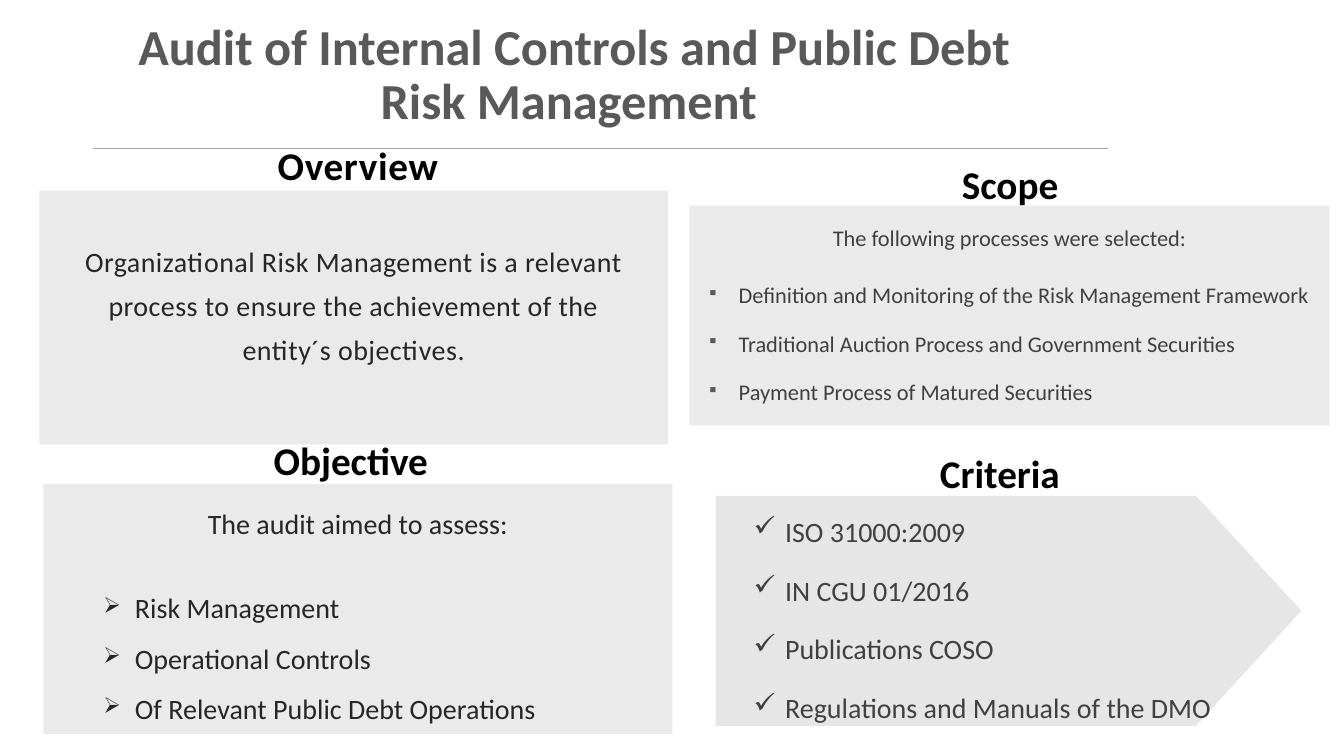
from dataclasses import dataclass

from lxml import etree
from pptx import Presentation
from pptx.dml.color import RGBColor
from pptx.enum.shapes import MSO_CONNECTOR, MSO_SHAPE
from pptx.enum.text import MSO_ANCHOR, PP_ALIGN
from pptx.oxml.ns import qn
from pptx.util import Pt

RECTANGLE = MSO_SHAPE.RECTANGLE
PENTAGON = MSO_SHAPE.PENTAGON
TOP, MIDDLE = MSO_ANCHOR.TOP, MSO_ANCHOR.MIDDLE
LEFT, CENTER = PP_ALIGN.LEFT, PP_ALIGN.CENTER
FONT = "Calibri"
HANGING = 22.5


@dataclass
class Box:
    left: float
    top: float
    width: float
    height: float


@dataclass
class Bullet:
    symbol: str
    indent: float
    percent: int = 100
    color: str = ""


@dataclass
class Line:
    text: str
    size: float
    color: str
    bold: bool = False
    line_spacing: float = 1.0
    space_before: float = 0
    tracking: int = 0
    bullet: Bullet | None = None


@dataclass
class Panel:
    box: Box
    fill: str
    lines: list[Line]
    kind: int = PENTAGON
    point: float = 0
    anchor: int = TOP
    top_inset: float = 3.6


@dataclass
class Label:
    box: Box
    line: Line
    anchor: int = TOP


def rgb(color: str) -> RGBColor:
    return RGBColor.from_string(color)


def add_bullet(paragraph, bullet: Bullet) -> None:
    properties = paragraph._p.get_or_add_pPr()
    properties.set("marL", str(Pt(bullet.indent)))
    properties.set("indent", str(-Pt(HANGING)))
    if bullet.color:
        holder = etree.SubElement(properties, qn("a:buClr"))
        etree.SubElement(holder, qn("a:srgbClr")).set("val", bullet.color)
    etree.SubElement(properties, qn("a:buSzPct")).set("val", str(bullet.percent * 1000))
    etree.SubElement(properties, qn("a:buChar")).set("char", bullet.symbol)


def write_lines(text_frame, lines: list[Line], anchor: int) -> None:
    text_frame.word_wrap = True
    text_frame.vertical_anchor = anchor
    for index, line in enumerate(lines):
        paragraph = text_frame.paragraphs[0] if index == 0 else text_frame.add_paragraph()
        if line.bullet:
            add_bullet(paragraph, line.bullet)
        paragraph.alignment = LEFT if line.bullet else CENTER
        paragraph.line_spacing = line.line_spacing
        paragraph.space_before = Pt(line.space_before if index else 0)
        paragraph.font.name = FONT
        paragraph.font.size = Pt(line.size)
        paragraph.font.bold = line.bold
        paragraph.font.color.rgb = rgb(line.color)
        run = paragraph.add_run()
        run.text = line.text
        if line.tracking:
            run._r.get_or_add_rPr().set("spc", str(line.tracking))


def place(box: Box) -> tuple[Pt, Pt, Pt, Pt]:
    return Pt(box.left), Pt(box.top), Pt(box.width), Pt(box.height)


def draw_panel(slide, panel: Panel) -> None:
    shape = slide.shapes.add_shape(panel.kind, *place(panel.box))
    if panel.kind == PENTAGON:
        shape.adjustments[0] = panel.point
    shape.shadow.inherit = False
    shape.fill.solid()
    shape.fill.fore_color.rgb = rgb(panel.fill)
    shape.line.fill.background()
    if panel.lines:
        shape.text_frame.margin_top = Pt(panel.top_inset)
        write_lines(shape.text_frame, panel.lines, panel.anchor)


def draw_label(slide, label: Label) -> None:
    text_box = slide.shapes.add_textbox(*place(label.box))
    write_lines(text_box.text_frame, [label.line], label.anchor)


def draw_rule(slide, left: float, right: float, top: float) -> None:
    rule = slide.shapes.add_connector(
        MSO_CONNECTOR.STRAIGHT, Pt(left), Pt(top), Pt(right), Pt(top))
    rule.line.color.rgb = rgb("A6A6A6")
    rule.line.width = Pt(0.75)
    etree.SubElement(rule._element.spPr, qn("a:effectLst"))


def heading(text: str, tracking: int = 0) -> Line:
    return Line(text, 28, "000000", bold=True, tracking=tracking)


def bulleted(texts: list[str], size: float, color: str, bullet: Bullet,
             gaps: list[float]) -> list[Line]:
    return [Line(text, size, color, line_spacing=1.5, space_before=gap, bullet=bullet)
            for text, gap in zip(texts, gaps)]


SCOPE = [Line("The following processes were selected:", 16, "404040", line_spacing=1.5)] + bulleted(
    ["Definition and Monitoring of the Risk Management Framework",
     "Traditional Auction Process and Government Securities",
     "Payment Process of Matured Securities"],
    16, "404040", Bullet("▪", 28.1, 70, "595959"), [12, 6, 6])
CRITERIA = bulleted(
    ["ISO 31000:2009", "IN CGU 01/2016", "Publications COSO",
     "Regulations and Manuals of the DMO"],
    20, "404040", Bullet("✓", 42.5), [0, 6, 6, 6])
OBJECTIVE = [Line("The audit aimed to assess:", 20, "262626")] + bulleted(
    ["Risk Management", "Operational Controls", "Of Relevant Public Debt Operations"],
    20, "262626", Bullet("➢", 58.3, 80), [24, 0, 0])

PANELS = [
    Panel(Box(492.5, 146.9, 457.2, 157), "EAEAEA", SCOPE),
    Panel(Box(511.2, 354.2, 418.3, 164.2), "E6E6E6", CRITERIA, point=0.458, anchor=MIDDLE),
    Panel(Box(28.1, 136.1, 449.3, 181.4), "EAEAEA", [], kind=RECTANGLE),
    Panel(Box(31, 345.6, 449.3, 178.6), "EAEAEA", OBJECTIVE, top_inset=16.5),
]
LABELS = [
    Label(Box(64.1, 11.5, 692.6, 85.7),
          Line("Audit of Internal Controls and Public Debt Risk Management ", 36, "595959",
               bold=True, line_spacing=0.9), MIDDLE),
    Label(Box(158.4, 308.2, 184.3, 41), heading("Objective")),
    Label(Box(579.6, 317.5, 269.3, 41), heading("Criteria")),
    Label(Box(586.8, 110.9, 269.3, 41), heading("Scope")),
    Label(Box(50.4, 164.2, 404.6, 115.2),
          Line("Organizational Risk Management is a relevant process to ensure the "
               "achievement of the entity´s objectives.", 20, "262626",
               line_spacing=1.3, tracking=30)),
    Label(Box(128.9, 97.2, 253.4, 47.5), heading("Overview", tracking=50)),
]


def main() -> None:
    presentation = Presentation()
    presentation.slide_width, presentation.slide_height = Pt(960), Pt(540)
    slide = presentation.slides.add_slide(presentation.slide_layouts[6])
    draw_rule(slide, 66.2, 791.3, 105.8)
    for panel in PANELS:
        draw_panel(slide, panel)
    for label in LABELS:
        draw_label(slide, label)
    presentation.save("out.pptx")


if __name__ == "__main__":
    main()
